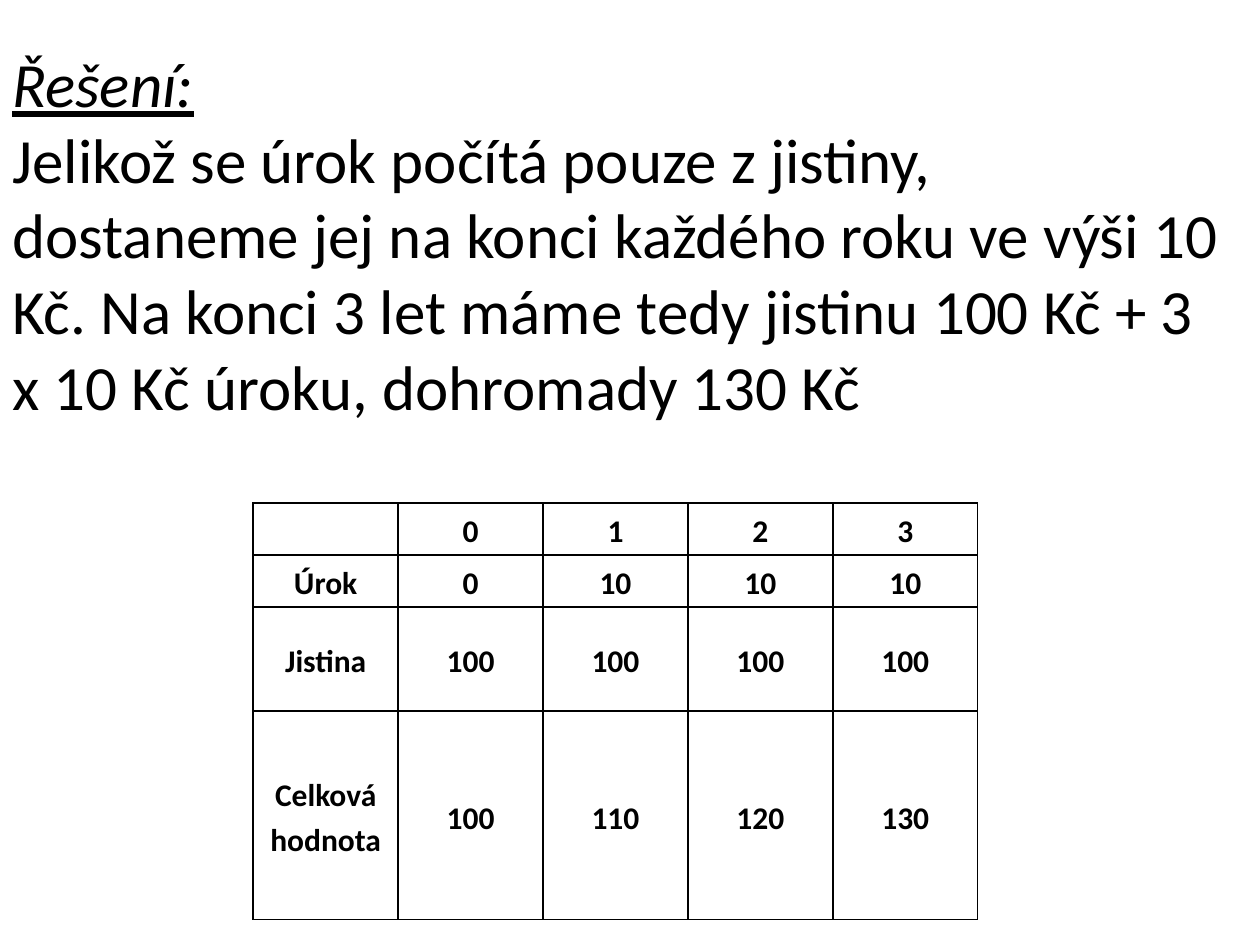
"""Build a slide that solves a simple interest exercise with a year-by-year table."""
from dataclasses import dataclass

from lxml.etree import SubElement
from pptx import Presentation
from pptx.dml.color import RGBColor
from pptx.enum.text import MSO_ANCHOR, PP_ALIGN
from pptx.oxml.ns import qn
from pptx.slide import Slide
from pptx.table import _Cell
from pptx.text.text import Font
from pptx.util import Emu, Inches, Pt


@dataclass(frozen=True)
class Theme:
    font: str = "Calibri"
    ink: str = "000000"
    body_size: int = 36
    cell_size: int = 18
    border: int = 1


@dataclass(frozen=True)
class Area:
    left: float
    top: float
    width: float
    height: float

    def lengths(self) -> list[Emu]:
        return [Inches(n) for n in (self.left, self.top, self.width, self.height)]


@dataclass(frozen=True)
class YearRow:
    label: str
    values: tuple[int, ...]
    units: int


THEME = Theme()
SOLUTION_AREA = Area(0, 0.29, 9.8, 3.13)
TABLE_AREA = Area(2.01, 3.99, 5.75, 3.31)
HEADING = "Řešení:"
EXPLANATION = (
    "Jelikož se úrok počítá pouze z jistiny, dostaneme jej na konci každého roku "
    "ve výši 10 Kč. Na konci 3 let máme tedy jistinu 100 Kč + 3 x 10 Kč úroku, "
    "dohromady 130 Kč"
)
YEAR_ROWS = (
    YearRow("", (0, 1, 2, 3), 1),
    YearRow("Úrok", (0, 10, 10, 10), 1),
    YearRow("Jistina", (100, 100, 100, 100), 2),
    YearRow("Celková hodnota", (100, 110, 120, 130), 4),
)


def set_font(font: Font, size: int) -> None:
    font.name = THEME.font
    font.size = Pt(size)
    font.color.rgb = RGBColor.from_string(THEME.ink)


def add_solution(slide: Slide) -> None:
    frame = slide.shapes.add_textbox(*SOLUTION_AREA.lengths()).text_frame
    frame.word_wrap = True
    frame.vertical_anchor = MSO_ANCHOR.MIDDLE
    frame.text = f"{HEADING}\n{EXPLANATION}"
    for paragraph in frame.paragraphs:
        set_font(paragraph.font, THEME.body_size)
    heading = frame.paragraphs[0]
    heading.font.italic = heading.font.underline = True


def draw_borders(cell: _Cell) -> None:
    properties = cell._tc.get_or_add_tcPr()
    for side in ("lnL", "lnR", "lnT", "lnB"):
        line = SubElement(properties, qn(f"a:{side}"), w=str(Pt(THEME.border)))
        fill = SubElement(line, qn("a:solidFill"))
        SubElement(fill, qn("a:srgbClr"), val=THEME.ink)


def fill_cell(cell: _Cell, content: str) -> None:
    cell.text = content
    cell.vertical_anchor = MSO_ANCHOR.MIDDLE
    cell.margin_left = cell.margin_right = Inches(0.05)
    cell.margin_top = cell.margin_bottom = 0
    paragraph = cell.text_frame.paragraphs[0]
    paragraph.alignment = PP_ALIGN.CENTER
    paragraph.line_spacing = 1.15
    paragraph.space_after = Pt(10)
    set_font(paragraph.font, THEME.cell_size)
    paragraph.font.bold = True
    draw_borders(cell)
    cell.fill.background()


def add_year_table(slide: Slide) -> None:
    column_count = 1 + len(YEAR_ROWS[0].values)
    table = slide.shapes.add_table(
        len(YEAR_ROWS), column_count, *TABLE_AREA.lengths()
    ).table
    table.first_row = table.horz_banding = False
    unit_height = TABLE_AREA.height / sum(row.units for row in YEAR_ROWS)
    for row_index, year_row in enumerate(YEAR_ROWS):
        table.rows[row_index].height = Inches(unit_height * year_row.units)
        for column, content in enumerate((year_row.label, *year_row.values)):
            fill_cell(table.cell(row_index, column), str(content))


def main() -> None:
    presentation = Presentation()
    presentation.slide_width = Inches(10)
    presentation.slide_height = Inches(7.5)
    slide = presentation.slides.add_slide(presentation.slide_layouts[6])
    add_year_table(slide)
    add_solution(slide)
    presentation.save("out.pptx")


if __name__ == "__main__":
    main()
